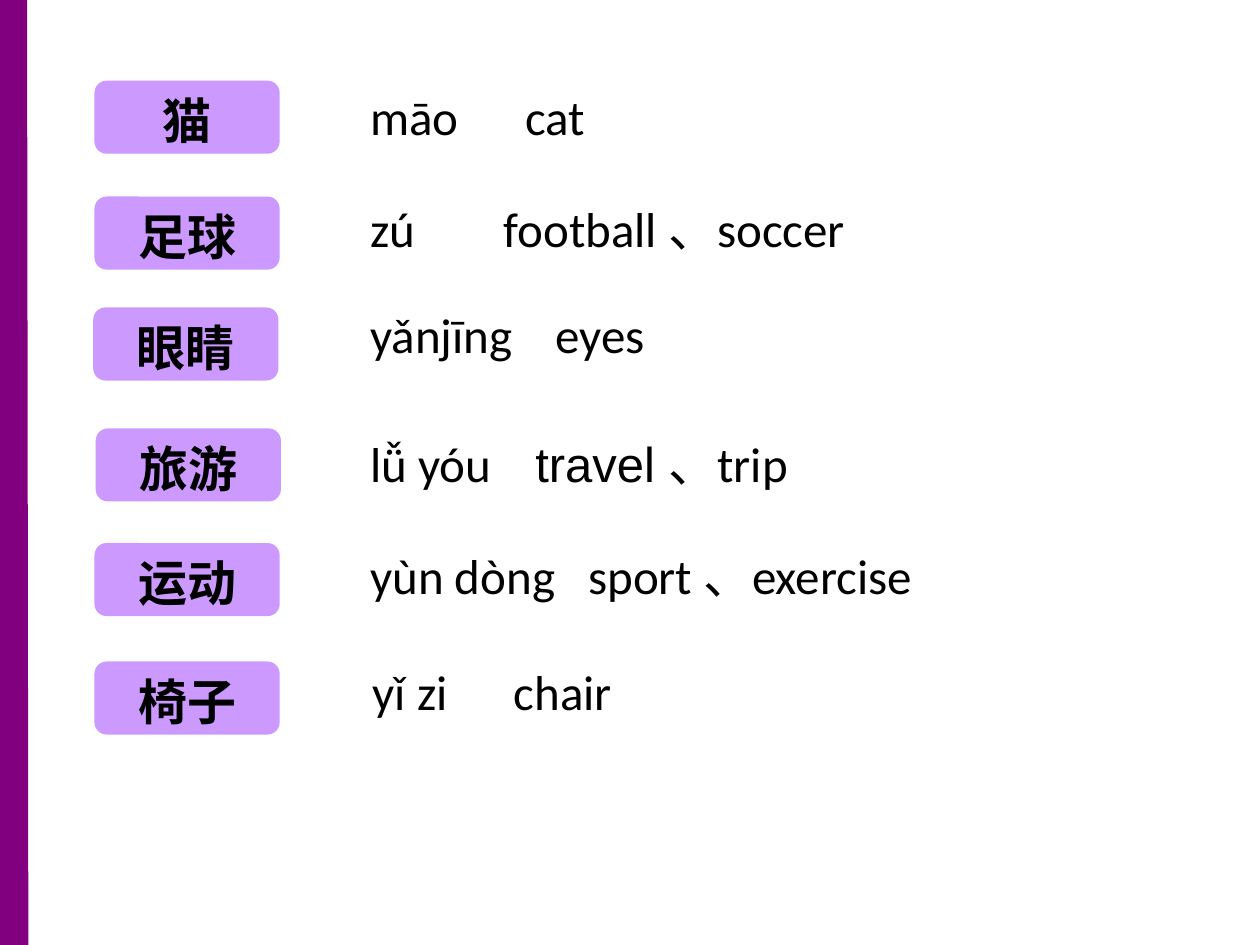
from lxml import etree
from pptx import Presentation
from pptx.dml.color import RGBColor
from pptx.enum.shapes import MSO_CONNECTOR, MSO_SHAPE
from pptx.enum.text import MSO_ANCHOR, PP_ALIGN
from pptx.oxml.ns import qn
from pptx.util import Inches, Pt

ROUND = MSO_SHAPE.ROUNDED_RECTANGLE
LINE = MSO_CONNECTOR.STRAIGHT
MIDDLE = MSO_ANCHOR.MIDDLE
CENTER = PP_ALIGN.CENTER
LEFT = PP_ALIGN.LEFT

COLORS = {"bar": "800080", "pill": "CC99FF", "text": "000000"}


def write(shape, parts, bold=False, align=LEFT, tab=None):
    para = shape.text_frame.paragraphs[0]
    para.alignment = align
    for text, face in parts:
        run = para.add_run()
        run.text = text
        run.font.name = face
        run.font.size = Pt(28)
        run.font.bold = bold
        run.font.color.rgb = RGBColor.from_string(COLORS["text"])
    if tab:
        stops = etree.SubElement(para._p.get_or_add_pPr(), qn("a:tabLst"))
        etree.SubElement(stops, qn("a:tab"), pos=str(Inches(tab)), algn="l")


deck = Presentation()
deck.slide_width = Inches(10)
deck.slide_height = Inches(7.5)
slide = deck.slides.add_slide(deck.slide_layouts[6])

bar = slide.shapes.add_connector(
    LINE, Inches(0.1), Inches(7.5), Inches(0.09), Inches(-0.02))
bar.line.color.rgb = RGBColor.from_string(COLORS["bar"])
bar.line.width = Pt(18)
etree.SubElement(bar._element.spPr, qn("a:effectLst"))

WORDS = [
    ("猫", 0.75, 0.64, 2.84, 0.64, 5.5, 1.23, [("māo\tcat", "Calibri")]),
    ("足球", 0.75, 1.56, 2.84, 1.53, 4.91, 1.06,
     [("zú\tfootball 、soccer", "Calibri")]),
    ("眼睛", 0.74, 2.44, 2.84, 2.37, 6.32, 1.47,
     [("yǎnjīng\teyes", "Calibri")]),
    ("旅游", 0.76, 3.4, 2.84, 3.39, 5.62, 1.31,
     [("lǚ yóu\t", "Calibri"), ("travel 、", "Arial"), ("trip", "Calibri")]),
    ("运动", 0.75, 4.31, 2.84, 4.28, 5.12, 1.73,
     [("yùn dòng\tsport 、exercise", "Calibri")]),
    ("椅子", 0.75, 5.25, 2.86, 5.2, 5.16, 1.12,
     [("yǐ zi\tchair", "Calibri")]),
]

for word, left, top, x, y, width, tab, gloss in WORDS:
    pill = slide.shapes.add_shape(
        ROUND, Inches(left), Inches(top), Inches(1.47), Inches(0.58))
    pill.shadow.inherit = False
    pill.fill.solid()
    pill.fill.fore_color.rgb = RGBColor.from_string(COLORS["pill"])
    pill.line.fill.background()
    frame = pill.text_frame
    frame.vertical_anchor = MIDDLE
    frame.margin_top = Inches(0.04)
    frame.margin_bottom = 0
    write(pill, [(word, "Calibri")], bold=True, align=CENTER)

    box = slide.shapes.add_textbox(
        Inches(x), Inches(y), Inches(width), Inches(0.57))
    box.text_frame.word_wrap = True
    write(box, gloss, tab=tab)

deck.save("out.pptx")
